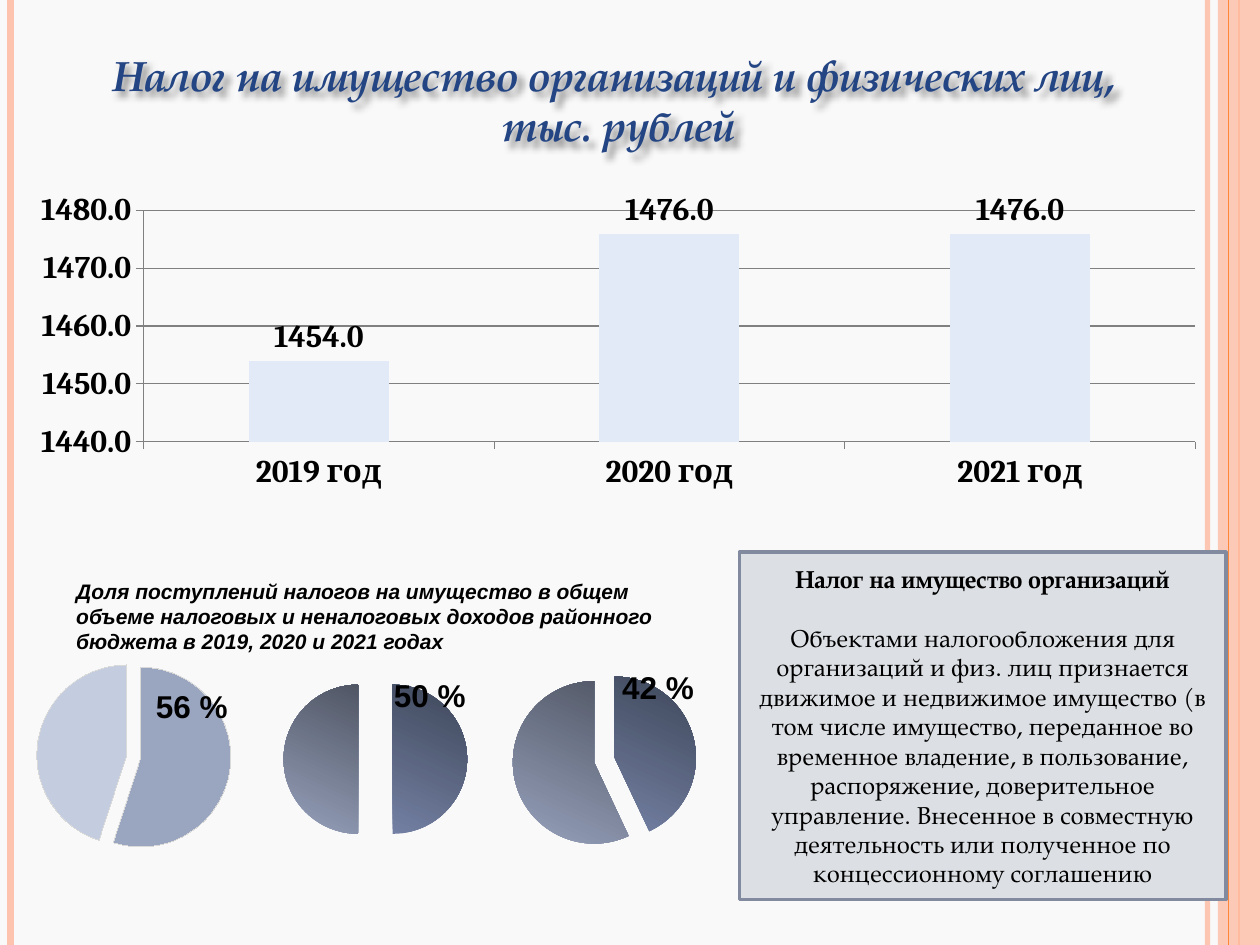
from lxml import etree
from pptx import Presentation
from pptx import util as u
from pptx.chart.data import CategoryChartData
from pptx.dml.color import RGBColor
from pptx.enum import chart as ch
from pptx.enum import shapes, text
from pptx.oxml import parse_xml
from pptx.oxml.ns import nsdecls, qn

Pt = u.Pt
BLACK = RGBColor(0, 0, 0)
BACK = RGBColor(0xF9, 0xF9, 0xF9)
NAVY = RGBColor(0x24, 0x45, 0x83)
PEACH = RGBColor(0xFE, 0xC3, 0xAE)
ORANGE = RGBColor(0xFE, 0x86, 0x37)
BAR = RGBColor(0xE3, 0xEA, 0xF7)
GRID = RGBColor(0x80, 0x80, 0x80)
PANEL = RGBColor(0xDC, 0xDF, 0xE3)
EDGE = RGBColor(0x81, 0x8A, 0x9E)
RIM = RGBColor(0xD9, 0xD9, 0xD9)
FLAT = [RGBColor(0x9A, 0xA5, 0xBF), RGBColor(0xC4, 0xCC, 0xDF)]
# Light bottom and dark top of each shaded slice
SHADED = [
    (RGBColor(0x74, 0x80, 0xA3), RGBColor(0x3D, 0x46, 0x58)),
    (RGBColor(0x97, 0xA1, 0xBC), RGBColor(0x50, 0x56, 0x64)),
]
SERIF, SANS, AXIS = "TeX Gyre Pagella", "Arial", "Cambria"
SHADOW = (
    f'<a:effectLst {nsdecls("a")}><a:outerShdw blurRad="50800" dist="50800" '
    'dir="2700000"><a:srgbClr val="000000"><a:alpha val="45000"/></a:srgbClr>'
    "</a:outerShdw></a:effectLst>"
)


def style(font, face=SANS, size=18, color=BLACK, bold=True, italic=False):
    font.name, font.size = face, Pt(size)
    font.bold, font.italic = bold, italic
    font.color.rgb = color


def write(para, words, align=text.PP_ALIGN.LEFT, before=0, **look):
    para.alignment = align
    para.space_before = Pt(before)
    para.line_spacing = 1.0
    run = para.add_run()
    run.text = words
    style(run.font, **look)


def fade(fill, percent):
    color = fill.fore_color._xFill.find(qn("a:srgbClr"))
    etree.SubElement(color, qn("a:alpha")).set("val", str(percent * 1000))


class Page:
    def __init__(self, slide):
        self.slide = slide
        self.items = slide.shapes
        slide.background.fill.solid()
        slide.background.fill.fore_color.rgb = BACK

    def rule(self, x, color, width, percent=100):
        """Draw a full-height vertical line."""
        line = self.items.add_connector(
            shapes.MSO_CONNECTOR.STRAIGHT, Pt(x), 0, Pt(x), Pt(540))
        line.line.color.rgb = color
        line.line.width = Pt(width)
        if percent < 100:
            fade(line.line.fill, percent)
        etree.SubElement(line._element.spPr, qn("a:effectLst"))

    def rect(self, box, color, edge=None, percent=100):
        shape = self.items.add_shape(
            shapes.MSO_SHAPE.RECTANGLE, *map(Pt, box))
        shape.shadow.inherit = False
        shape.fill.solid()
        shape.fill.fore_color.rgb = color
        if percent < 100:
            fade(shape.fill, percent)
        if edge is None:
            shape.line.fill.background()
        else:
            shape.line.color.rgb = edge
            shape.line.width = Pt(2)
        return shape

    def title(self, box, lines):
        head = self.items.title
        head.left, head.top, head.width, head.height = map(Pt, box)
        frame = head.text_frame
        frame.auto_size = text.MSO_AUTO_SIZE.NONE
        frame.vertical_anchor = text.MSO_ANCHOR.TOP
        for i, words in enumerate(lines):
            para = frame.add_paragraph() if i else frame.paragraphs[0]
            write(para, words, text.PP_ALIGN.CENTER, face=SERIF, size=24,
                  color=NAVY, italic=True)
        head._element.spPr.append(parse_xml(SHADOW))

    def label(self, box, words, **look):
        frame = self.items.add_textbox(*map(Pt, box)).text_frame
        frame.word_wrap = True
        write(frame.paragraphs[0], words, **look)

    def panel(self, box, head, body):
        frame = self.rect(box, PANEL, EDGE).text_frame
        frame.word_wrap = True
        frame.vertical_anchor = text.MSO_ANCHOR.MIDDLE
        mid = text.PP_ALIGN.CENTER
        write(frame.paragraphs[0], head, mid, face=SERIF, size=14)
        write(frame.add_paragraph(), body, mid, before=17, face=SERIF,
              size=14, bold=False)

    def chart(self, kind, box, cats, vals, plot):
        """Add a one-series chart; plot is x, y, width, height as fractions."""
        data = CategoryChartData(number_format="0.0")
        data.categories = cats
        data.add_series("Series 1", vals)
        chart = self.items.add_chart(kind, *map(Pt, box), data).chart
        chart.has_legend = chart.has_title = False
        style(chart.font, face=AXIS)
        parts = "".join(f'<c:{k} val="{v:.3f}"/>' for k, v in zip("xywh", plot))
        layout = parse_xml(
            f'<c:layout {nsdecls("c")}><c:manualLayout>'
            '<c:layoutTarget val="inner"/><c:xMode val="edge"/>'
            f'<c:yMode val="edge"/>{parts}</c:manualLayout></c:layout>')
        area = chart._chartSpace.chart.plotArea
        old = area.find(qn("c:layout"))
        if old is not None:
            area.remove(old)
        area.insert(0, layout)
        return chart

    def bars(self, box, cats, vals):
        chart = self.chart(ch.XL_CHART_TYPE.COLUMN_CLUSTERED, box, cats, vals,
                           (0.092, 0.072, 0.883, 0.666))
        plot = chart.plots[0]
        plot.gap_width, plot.vary_by_categories = 150, False
        fill = plot.series[0].format.fill
        fill.solid()
        fill.fore_color.rgb = BAR
        plot.has_data_labels = True
        tags = plot.data_labels
        tags.show_value = True
        tags.number_format, tags.number_format_is_linked = "0.0", False
        tags.position = ch.XL_LABEL_POSITION.OUTSIDE_END
        style(tags.font, face=AXIS)
        scale = chart.value_axis
        scale.minimum_scale, scale.maximum_scale = 1440, 1480
        scale.major_unit = 10
        scale.tick_labels.number_format = "0.0"
        scale.tick_labels.number_format_is_linked = False
        scale.major_gridlines.format.line.color.rgb = GRID
        for axis in (scale, chart.category_axis):
            axis.major_tick_mark = ch.XL_TICK_MARK.OUTSIDE
            axis.format.line.color.rgb = GRID
            style(axis.tick_labels.font, face=AXIS)

    def pie(self, box, vals, burst, mid, reach, shaded):
        """Place a pie by its centre and by its radius with slices apart."""
        left, top, wide, high = box
        plot = ((mid[0] - reach - left) / wide, (mid[1] - reach - top) / high,
                2 * reach / wide, 2 * reach / high)
        chart = self.chart(ch.XL_CHART_TYPE.PIE, box, ["1", "2"], vals, plot)
        chart.plots[0].vary_by_categories = True
        ser = chart.plots[0].series[0]
        for i in range(len(vals)):
            form = ser.points[i].format
            if shaded:
                form.fill.gradient()
                form.fill.gradient_angle = 65
                for stop, color in zip(form.fill.gradient_stops, SHADED[i]):
                    stop.color.rgb = color
                form.line.fill.background()
            else:
                form.fill.solid()
                form.fill.fore_color.rgb = FLAT[i]
                form.line.color.rgb = RIM
        gap = parse_xml(f'<c:explosion {nsdecls("c")} val="{burst}"/>')
        ser._element.find(qn("c:dPt")).addprevious(gap)


def main():
    deck = Presentation()
    deck.slide_width, deck.slide_height = Pt(720), Pt(540)
    page = Page(deck.slides.add_slide(deck.slide_layouts[5]))

    page.rule(690, PEACH, 3, 93)
    page.rule(6, PEACH, 4.5)
    page.rule(708, ORANGE, 1.5)
    page.rect((696, 0, 24, 540), PEACH, percent=87)
    page.rule(702, ORANGE, 0.75)

    page.title((16.5, 24.5, 674.5, 65.5), [
        "Налог на имущество организаций и физических лиц, ", "тыс. рублей"])
    page.bars((19.5, 106, 680.5, 198.5),
              ["2019 год", "2020 год", "2021 год"], [1454, 1476, 1476])
    page.label((36.5, 327, 363, 51),
               "Доля поступлений налогов на имущество в общем объеме налоговых "
               "и неналоговых доходов районного бюджета в 2019, 2020 и 2021 годах",
               size=12, italic=True)

    page.pie((0, 366.5, 153.5, 130.5), [55, 45], 8, (76.5, 432), 55.5, False)
    page.pie((120, 372, 188.5, 124.5), [50, 50], 23, (214.5, 434), 52.5, True)
    page.pie((258, 372, 175.5, 124.5), [43, 57], 13, (345.5, 434.5), 52.5, True)
    for x, y, words in [(82, 389, "56 %"), (218, 383, "50 %"),
                        (348.5, 378, "42 %")]:
        page.label((x, y, 77, 29), words)

    page.panel((422.5, 315.5, 278, 198.5), "Налог на имущество организаций",
               "Объектами налогообложения для организаций и физ. лиц признается "
               "движимое и недвижимое имущество (в том числе имущество, "
               "переданное во временное владение, в пользование, распоряжение, "
               "доверительное управление. Внесенное в совместную деятельность "
               "или полученное по концессионному соглашению")
    deck.save("out.pptx")


if __name__ == "__main__":
    main()
